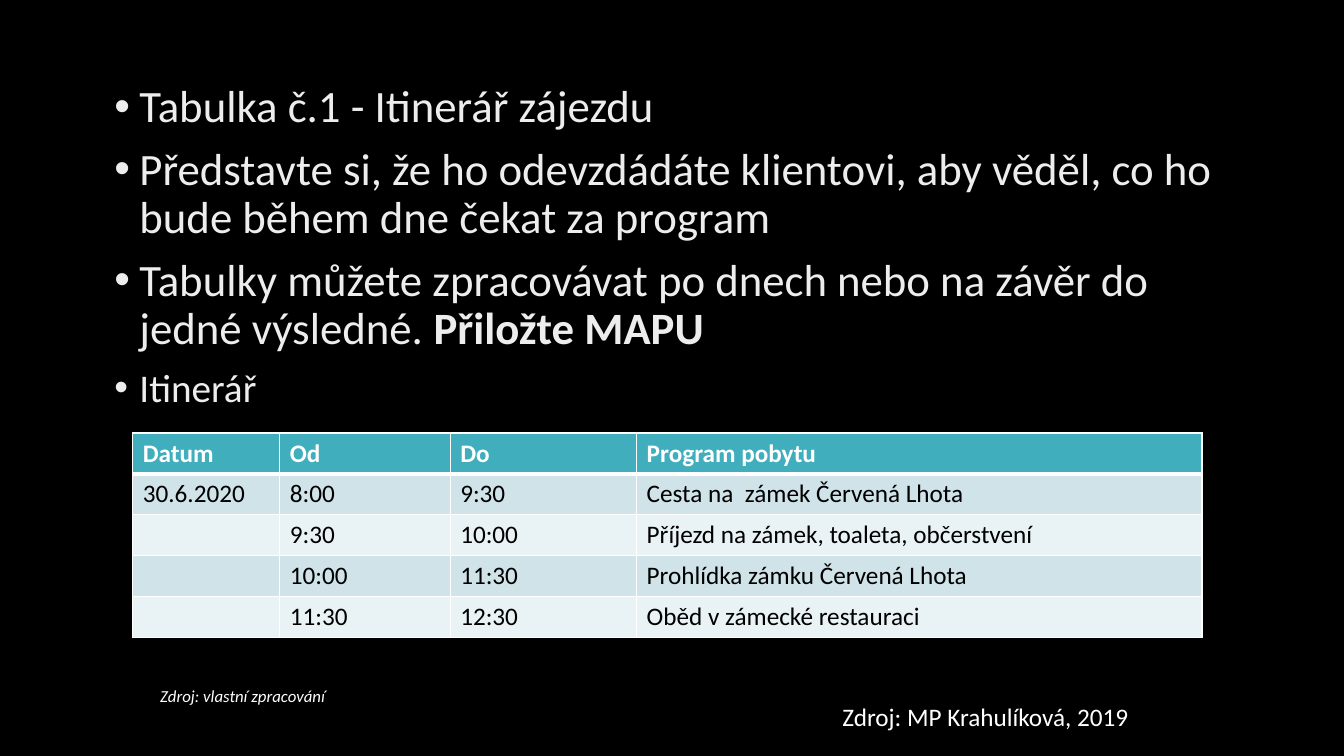
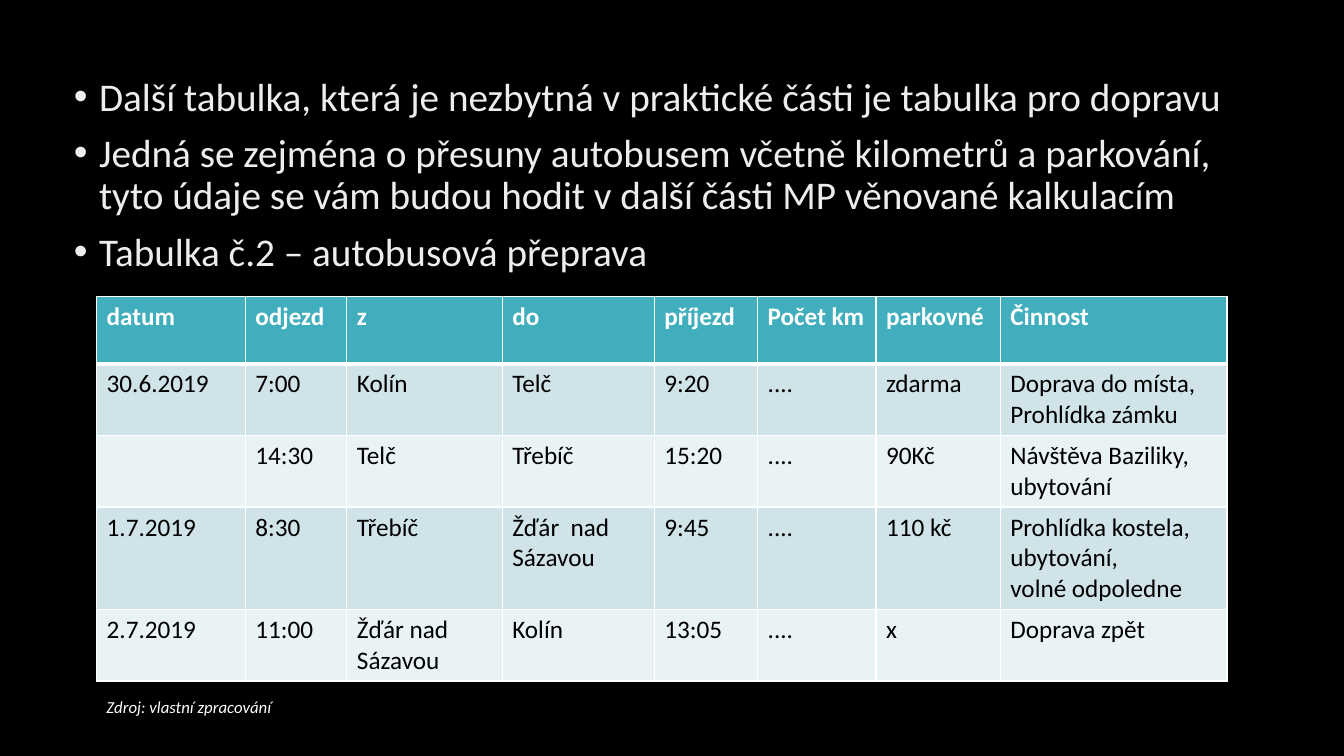
"""Two travel-plan slides, each with bullets, a table and its source line."""
from dataclasses import dataclass
from typing import Any

from lxml.etree import SubElement
from pptx import Presentation
from pptx.dml.color import RGBColor as RGB
from pptx.enum.text import MSO_ANCHOR as Anchor, MSO_AUTO_SIZE as AutoSize
from pptx.oxml import parse_xml
from pptx.oxml.ns import nsdecls, qn
from pptx.util import Emu, Inches, Pt

COLORS = {
    "background": "000000",
    "bullet": "EDEDED",
    "white": "FFFFFF",
    "black": "000000",
    "header": "41AEBD",
    "odd": "CFE3E8",
    "even": "E9F2F4",
}
FONT = "Calibri"
UNIT = Inches(1) / 12
GRID_COLS, GRID_ROWS = 160, 90
THIN, THICK = 1, 3
OWN_SOURCE = "Zdroj: vlastní zpracování"


@dataclass(frozen=True)
class Box:
    left: float
    top: float
    width: float
    height: float

    def emu(self) -> list[Emu]:
        return [units(v) for v in (self.left, self.top, self.width, self.height)]


@dataclass(frozen=True)
class Bullet:
    text: str
    size: int
    strong: str = ""


@dataclass(frozen=True)
class Caption:
    text: str
    box: Box
    size: int
    italic: bool


@dataclass(frozen=True)
class Grid:
    left: float
    top: float
    cols: list[float]
    heights: list[float]
    cells: list[list[str]]


@dataclass(frozen=True)
class Page:
    body: Box
    bullets: list[Bullet]
    grid: Grid
    captions: list[Caption]


PAGES = [
    Page(
        Box(12.4, 9.4, 134.3, 57.1),
        [
            Bullet("Tabulka č.1 - Itinerář zájezdu", 32),
            Bullet("Představte si, že ho odevzdádáte klientovi, aby věděl, "
                   "co ho bude během dne čekat za program", 32),
            Bullet("Tabulky můžete zpracovávat po dnech nebo na závěr "
                   "do jedné výsledné. ", 32, "Přiložte MAPU"),
            Bullet("Itinerář", 28),
        ],
        Grid(15.8, 51.55, [17.5, 20.3, 22.2, 67.3], [4.87] * 5, [
            ["Datum", "Od", "Do", "Program pobytu"],
            ["30.6.2020", "8:00", "9:30", "Cesta na  zámek Červená Lhota"],
            ["", "9:30", "10:00", "Příjezd na zámek, toaleta, občerstvení"],
            ["", "10:00", "11:30", "Prohlídka zámku Červená Lhota"],
            ["", "11:30", "12:30", "Oběd v zámecké restauraci"],
        ]),
        [
            Caption("Zdroj: MP Krahulíková, 2019", Box(99.1, 82.9, 37.7, 4.8), 18, False),
            Caption(OWN_SOURCE, Box(17.9, 81, 22.3, 3.6), 12, True),
        ],
    ),
    Page(
        Box(7.6, 8.6, 146.3, 57.1),
        [
            Bullet("Další tabulka, která je nezbytná v praktické části "
                   "je tabulka pro dopravu", 28),
            Bullet("Jedná se zejména o přesuny autobusem včetně kilometrů a parkování, "
                   "tyto údaje se vám budou hodit v další části MP věnované kalkulacím", 28),
            Bullet("Tabulka č.2 – autobusová přeprava", 28),
        ],
        Grid(11.5, 35.3, [17.7, 12.1, 18.5, 18.1, 12.3, 14.1, 14.8, 27],
             [8, 8, 8, 11.5, 8], [
            ["datum", "odjezd", "z", "do", "příjezd", "Počet km", "parkovné", "Činnost"],
            ["30.6.2019", "7:00", "Kolín", "Telč", "9:20", "....", "zdarma",
             "Doprava do místa, Prohlídka zámku"],
            ["", "14:30", "Telč", "Třebíč", "15:20", "....", "90Kč",
             "Návštěva Baziliky, ubytování"],
            ["1.7.2019", "8:30", "Třebíč", "Žďár  nad Sázavou", "9:45", "....", "110 kč",
             "Prohlídka kostela,\nubytování,\nvolné odpoledne"],
            ["2.7.2019", "11:00", "Žďár nad Sázavou", "Kolín", "13:05", "....", "x",
             "Doprava zpět"],
        ]),
        [Caption(OWN_SOURCE, Box(11.5, 82.4, 22.3, 3.6), 12, True)],
    ),
]


def units(value: float) -> Emu:
    return Emu(round(value * UNIT))


def set_all(target: Any, values: dict[str, Any]) -> None:
    for name, value in values.items():
        setattr(target, name, value)


def style(r: Any, size: int, color: str, bold: bool = False, italic: bool = False) -> None:
    set_all(r.font, {"name": FONT, "size": Pt(size), "bold": bold, "italic": italic})
    r.font.color.rgb = RGB.from_string(COLORS[color])


def add_bullets(slide: Any, page: Page) -> None:
    sp = slide.placeholders[1]
    set_all(sp, dict(zip(("left", "top", "width", "height"), page.body.emu())))
    tf = sp.text_frame
    set_all(tf, {"auto_size": AutoSize.NONE, "word_wrap": True,
                 "vertical_anchor": Anchor.TOP})
    for i, bullet in enumerate(page.bullets):
        p = tf.add_paragraph() if i else tf.paragraphs[0]
        set_all(p, {"line_spacing": 0.9, "space_before": Pt(10 if i else 0)})
        pPr = p._p.get_or_add_pPr()
        pPr.set("marL", str(Inches(0.25)))
        pPr.set("indent", str(-Inches(0.25)))
        SubElement(pPr, qn("a:buFont"), typeface="Arial")
        SubElement(pPr, qn("a:buChar"), char="•")
        for text, bold in ((bullet.text, False), (bullet.strong, True)):
            if text:
                r = p.add_run()
                r.text = text
                style(r, bullet.size, "bullet", bold)


def add_borders(cell: Any, top: int, bottom: int) -> None:
    tcPr = cell._tc.get_or_add_tcPr()
    widths = {"lnL": THIN, "lnR": THIN, "lnT": top, "lnB": bottom}
    for i, (side, width) in enumerate(widths.items()):
        tcPr.insert(i, parse_xml(
            f'<a:{side} {nsdecls("a")} w="{Pt(width)}"><a:solidFill>'
            f'<a:srgbClr val="{COLORS["white"]}"/></a:solidFill></a:{side}>'))


def add_grid(slide: Any, grid: Grid) -> None:
    box = Box(grid.left, grid.top, sum(grid.cols), sum(grid.heights))
    table = slide.shapes.add_table(len(grid.heights), len(grid.cols), *box.emu()).table
    for col, width in zip(table.columns, grid.cols):
        col.width = units(width)
    for i, (row, height) in enumerate(zip(table.rows, grid.heights)):
        row.height = units(height)
        fill = "header" if i == 0 else "odd" if i % 2 else "even"
        for cell, text in zip(row.cells, grid.cells[i]):
            cell.fill.solid()
            cell.fill.fore_color.rgb = RGB.from_string(COLORS[fill])
            add_borders(cell, THICK if i == 1 else THIN, THICK if i == 0 else THIN)
            if text:
                cell.text_frame.text = text
            for p in cell.text_frame.paragraphs:
                for r in p.runs:
                    style(r, 18, "black" if i else "white", bold=i == 0)


def add_caption(slide: Any, caption: Caption) -> None:
    tf = slide.shapes.add_textbox(*caption.box.emu()).text_frame
    set_all(tf, {"word_wrap": False, "auto_size": AutoSize.SHAPE_TO_FIT_TEXT})
    r = tf.paragraphs[0].add_run()
    r.text = caption.text
    style(r, caption.size, "white", italic=caption.italic)


def add_page(prs: Any, page: Page) -> None:
    slide = prs.slides.add_slide(prs.slide_layouts[1])
    title = slide.shapes.title.element
    title.getparent().remove(title)
    add_bullets(slide, page)
    add_grid(slide, page.grid)
    for caption in page.captions:
        add_caption(slide, caption)


def main() -> None:
    prs = Presentation()
    set_all(prs, {"slide_width": units(GRID_COLS), "slide_height": units(GRID_ROWS)})
    fill = prs.slide_master.background.fill
    fill.solid()
    fill.fore_color.rgb = RGB.from_string(COLORS["background"])
    for page in PAGES:
        add_page(prs, page)
    prs.save("out.pptx")


if __name__ == "__main__":
    main()
